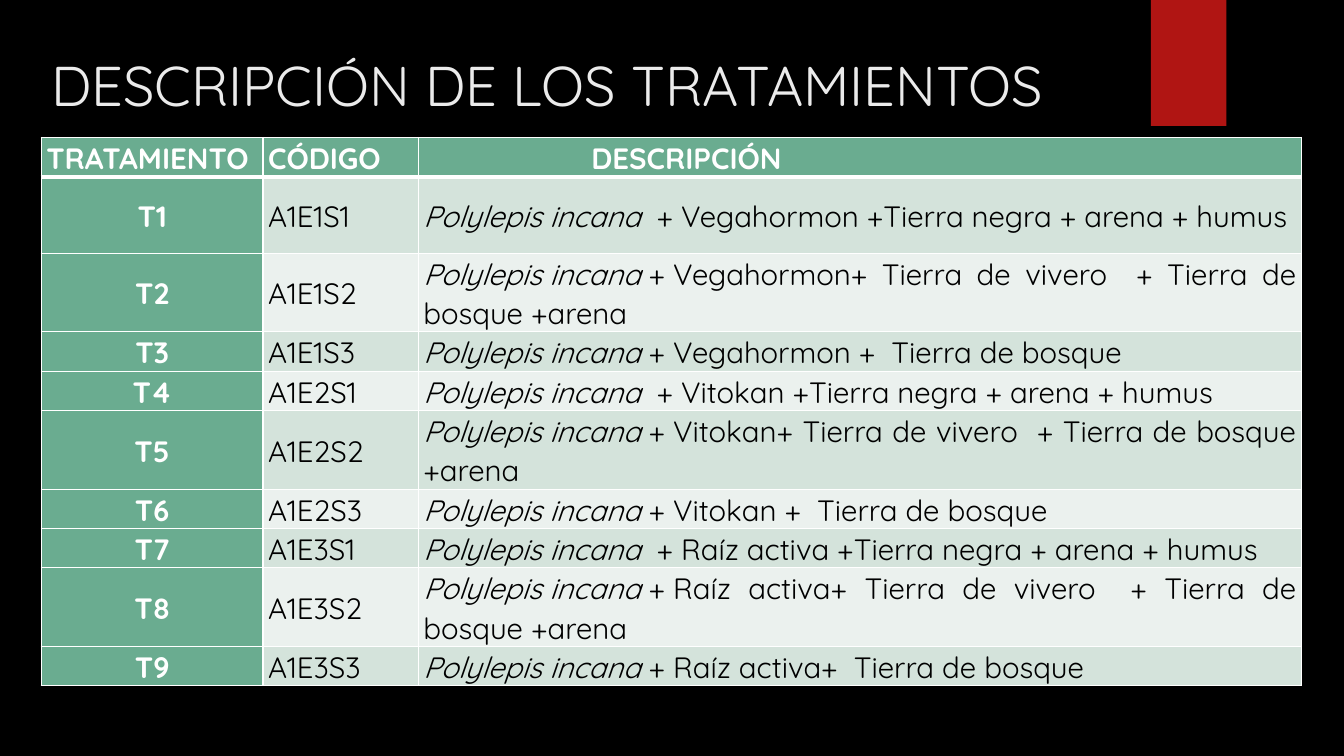
from lxml.etree import SubElement
from pptx import Presentation
from pptx.dml.color import RGBColor
from pptx.enum.shapes import MSO_SHAPE
from pptx.enum.text import MSO_ANCHOR, PP_ALIGN
from pptx.oxml.ns import qn
from pptx.util import Pt

BLACK = RGBColor(0x00, 0x00, 0x00)
WHITE = RGBColor(0xFF, 0xFF, 0xFF)
TITLE_GRAY = RGBColor(0xEB, 0xEB, 0xEB)
RED = RGBColor(0xB0, 0x15, 0x13)
GREEN = RGBColor(0x6A, 0xAC, 0x90)
BAND_DARK = RGBColor(0xD4, 0xE3, 0xDB)
BAND_LIGHT = RGBColor(0xEB, 0xF1, 0xEE)

# Fixed space: keeps its width in justified lines
FIXED = chr(160)
SPECIES = f"Polylepis{FIXED}incana"
HEADINGS = ["TRATAMIENTO", "CÓDIGO", "DESCRIPCIÓN"]
BLACK_SOIL = "+Tierra negra + arena + humus"
NURSERY_SOIL = "+ Tierra de vivero  + Tierra de bosque +arena"
FOREST_SOIL = "+  Tierra de bosque"
# What follows the species name in T1 to T9
MIXTURES = [
    f"{FIXED}{FIXED}+ Vegahormon {BLACK_SOIL}",
    f"{FIXED}+{FIXED}Vegahormon{NURSERY_SOIL}",
    f"{FIXED}+ Vegahormon {FOREST_SOIL}",
    f"{FIXED}{FIXED}+ Vitokan {BLACK_SOIL}",
    f"{FIXED}+{FIXED}Vitokan{NURSERY_SOIL}",
    f"{FIXED}+ Vitokan {FOREST_SOIL}",
    f"{FIXED}{FIXED}+ Raíz activa {BLACK_SOIL}",
    f"{FIXED}+{FIXED}Raíz activa{NURSERY_SOIL}",
    f"{FIXED}+ Raíz activa{FOREST_SOIL}",
]
COLUMN_WIDTHS = [158.4, 110.9, 630.7]
SINGLE, FIRST, DOUBLE = 28.1, 54.7, 56.2
ROW_HEIGHTS = [SINGLE, FIRST, DOUBLE, SINGLE, SINGLE,
               DOUBLE, SINGLE, SINGLE, DOUBLE, SINGLE]


def add_text(paragraph, text, font="Quicksand", size=21, color=BLACK,
             bold=False, italic=False):
    run = paragraph.add_run()
    run.text = text
    run.font.name = font
    run.font.size = Pt(size)
    run.font.color.rgb = color
    run.font.bold = bold
    run.font.italic = italic


class SlideBuilder:
    def __init__(self, slide):
        self.slide = slide

    def background(self, color):
        fill = self.slide.background.fill
        fill.solid()
        fill.fore_color.rgb = color

    def rectangle(self, left, top, width, height, color):
        shape = self.slide.shapes.add_shape(
            MSO_SHAPE.RECTANGLE, Pt(left), Pt(top), Pt(width), Pt(height))
        shape.shadow.inherit = False
        shape.fill.solid()
        shape.fill.fore_color.rgb = color
        shape.line.fill.background()

    def title(self, text, left, top, width, height):
        box = self.slide.shapes.add_textbox(
            Pt(left), Pt(top), Pt(width), Pt(height))
        box.text_frame.word_wrap = True
        add_text(box.text_frame.paragraphs[0], text, size=40, color=TITLE_GRAY)

    def table(self, left, top, widths, heights):
        frame = self.slide.shapes.add_table(
            len(heights), len(widths), Pt(left), Pt(top),
            Pt(sum(widths)), Pt(sum(heights)))
        table = frame.table
        table.first_row = table.horz_banding = False
        for column, width in zip(table.columns, widths):
            column.width = Pt(width)
        for row, height in zip(table.rows, heights):
            row.height = Pt(height)
        return table

    def borders(self, cell, top, bottom):
        properties = cell._tc.get_or_add_tcPr()
        for side, width in (("L", 1), ("R", 1), ("T", top), ("B", bottom)):
            line = SubElement(properties, qn(f"a:ln{side}"), w=str(Pt(width)))
            fill = SubElement(line, qn("a:solidFill"))
            SubElement(fill, qn("a:srgbClr"), val=str(WHITE))

    def cell(self, cell, fill, alignment=PP_ALIGN.JUSTIFY, top=1, bottom=1):
        self.borders(cell, top, bottom)
        cell.fill.solid()
        cell.fill.fore_color.rgb = fill
        cell.vertical_anchor = MSO_ANCHOR.MIDDLE
        cell.margin_left = cell.margin_right = Pt(3.6)
        cell.margin_top = cell.margin_bottom = Pt(0)
        paragraph = cell.text_frame.paragraphs[0]
        paragraph.alignment = alignment
        paragraph.line_spacing = 1.07
        return paragraph


def main():
    presentation = Presentation()
    presentation.slide_width = Pt(960)
    presentation.slide_height = Pt(540)
    slide = presentation.slides.add_slide(presentation.slide_layouts[6])
    builder = SlideBuilder(slide)

    # Background, red tab and title
    builder.background(BLACK)
    builder.rectangle(822, 0, 54, 90, RED)
    builder.title("DESCRIPCIÓN DE LOS TRATAMIENTOS", 29.5, 32.4, 790.6, 63.4)

    # Table header
    table = builder.table(29.5, 98.1, COLUMN_WIDTHS, ROW_HEIGHTS)
    for column, heading in enumerate(HEADINGS):
        paragraph = builder.cell(table.cell(0, column), GREEN, bottom=3)
        add_text(paragraph, heading, color=WHITE, bold=True)
    paragraph._p.get_or_add_pPr().set("indent", str(Pt(120)))

    # Treatments: three stimulants (E) by three substrates (S)
    for index, mixture in enumerate(MIXTURES):
        row = index + 1
        band = BAND_LIGHT if index % 2 else BAND_DARK
        top = 3 if row == 1 else 1
        number = builder.cell(table.cell(row, 0), GREEN, PP_ALIGN.CENTER, top)
        add_text(number, f"T{row}", color=WHITE, bold=True)
        code = builder.cell(table.cell(row, 1), band, top=top)
        add_text(code, f"A1E{index // 3 + 1}S{index % 3 + 1}")
        description = builder.cell(table.cell(row, 2), band, top=top)
        add_text(description, SPECIES, italic=True)
        add_text(description, mixture)

    presentation.save("out.pptx")


if __name__ == "__main__":
    main()
